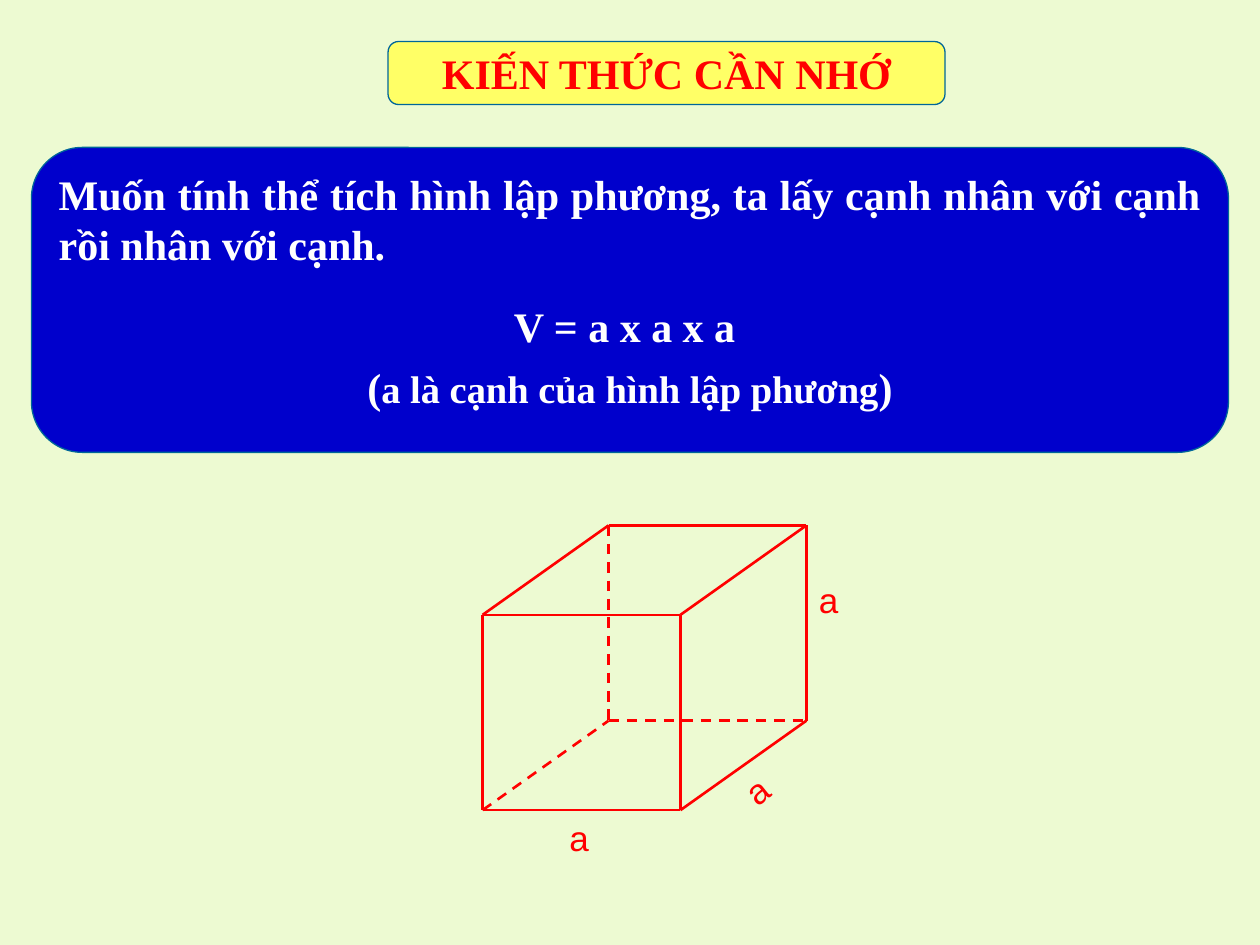
import pptx
import pptx.util
from lxml import etree
from pptx.dml.color import RGBColor
from pptx.enum.dml import MSO_LINE
from pptx.enum.shapes import MSO_CONNECTOR, MSO_SHAPE
from pptx.enum.text import MSO_ANCHOR, MSO_AUTO_SIZE, PP_ALIGN
from pptx.oxml.ns import qn

Inches = pptx.util.Inches
Pt = pptx.util.Pt

BACKGROUND = RGBColor(0xED, 0xFA, 0xD2)
YELLOW = RGBColor(0xFF, 0xFF, 0x66)
BLUE = RGBColor(0x00, 0x00, 0xCC)
TEAL = RGBColor(0x00, 0x66, 0x99)
RED = RGBColor(0xFF, 0x00, 0x00)
WHITE = RGBColor(0xFF, 0xFF, 0xFF)
SERIF, SANS = "Times New Roman", "Arial"

# Paragraphs: alignment, space before, [(text, size), ...]
TITLE = [(PP_ALIGN.CENTER, 0, [("KIẾN THỨC CẦN NHỚ", 24)])]
RULE = [
    (PP_ALIGN.JUSTIFY, 18, [
        ("Muốn tính thể tích hình lập phương, ta lấy cạnh nhân với cạnh rồi nhân với cạnh.", 24)]),
    (PP_ALIGN.CENTER, 18, [("V = a x a x a ", 24)]),
    (PP_ALIGN.CENTER, 6, [("(", 24), ("a là cạnh của hình lập phương", 22), (")", 24)]),
]

# Cube: front top-left corner, edge lengths, and offset to the back face
FRONT_LEFT, FRONT_TOP = 3.83, 4.88
WIDTH, HEIGHT = 1.57, 1.55
DEPTH_X, DEPTH_Y = 1.0, -0.71
HIDDEN_CORNER = (0, 1, 1)  # left, bottom, back

# Edge labels: text, left, top, rotation
EDGE_LABELS = [("a", 5.79, 5.95, 321.4), ("a", 6.4, 4.54, 0), ("a", 4.42, 6.43, 0)]


def style_run(run, size, font, color, bold):
    run.font.size = Pt(size)
    run.font.name = font
    run.font.color.rgb = color
    run.font.bold = bold


def add_panel(slide, box, fill, paragraphs, color, anchor):
    shape = slide.shapes.add_shape(MSO_SHAPE.ROUNDED_RECTANGLE, *map(Inches, box))
    shape.shadow.inherit = False
    shape.fill.solid()
    shape.fill.fore_color.rgb = fill
    shape.line.color.rgb = TEAL
    shape.line.width = Pt(0.75)
    frame = shape.text_frame
    frame.word_wrap = True
    frame.vertical_anchor = anchor
    for index, (alignment, space_before, runs) in enumerate(paragraphs):
        paragraph = frame.add_paragraph() if index else frame.paragraphs[0]
        paragraph.alignment = alignment
        paragraph.space_before = Pt(space_before)
        for text, size in runs:
            run = paragraph.add_run()
            run.text = text
            style_run(run, size, SERIF, color, True)


def corner_point(corner):
    """Slide position of a cube corner given as (right, bottom, back) flags."""
    right, bottom, back = corner
    return (Inches(FRONT_LEFT + right * WIDTH + back * DEPTH_X),
            Inches(FRONT_TOP + bottom * HEIGHT + back * DEPTH_Y))


def add_cube(slide):
    corners = [(x, y, z) for x in (0, 1) for y in (0, 1) for z in (0, 1)]
    for start in corners:
        for axis in range(3):
            if start[axis]:
                continue
            end = start[:axis] + (1,) + start[axis + 1:]
            edge = slide.shapes.add_connector(
                MSO_CONNECTOR.STRAIGHT, *corner_point(start), *corner_point(end))
            edge.line.color.rgb = RED
            edge.line.width = Pt(1.5)
            if HIDDEN_CORNER in (start, end):
                edge.line.dash_style = MSO_LINE.DASH
            etree.SubElement(edge._element.spPr, qn("a:effectLst"))


def add_edge_label(slide, text, left, top, rotation):
    label = slide.shapes.add_textbox(Inches(left), Inches(top), Inches(0.69), Inches(0.43))
    label.rotation = rotation
    frame = label.text_frame
    frame.word_wrap = True
    frame.auto_size = MSO_AUTO_SIZE.SHAPE_TO_FIT_TEXT
    frame.text = text
    style_run(frame.paragraphs[0].runs[0], 20, SANS, RED, False)


def main():
    presentation = pptx.Presentation()
    presentation.slide_width = Inches(10)
    presentation.slide_height = Inches(7.5)
    slide = presentation.slides.add_slide(presentation.slide_layouts[6])
    slide.background.fill.solid()
    slide.background.fill.fore_color.rgb = BACKGROUND

    add_panel(slide, (3.08, 0.33, 4.42, 0.5), YELLOW, TITLE, RED, MSO_ANCHOR.MIDDLE)
    add_panel(slide, (0.25, 1.17, 9.5, 2.42), BLUE, RULE, WHITE, MSO_ANCHOR.TOP)
    add_cube(slide)
    for label in EDGE_LABELS:
        add_edge_label(slide, *label)

    presentation.save("out.pptx")


if __name__ == "__main__":
    main()
